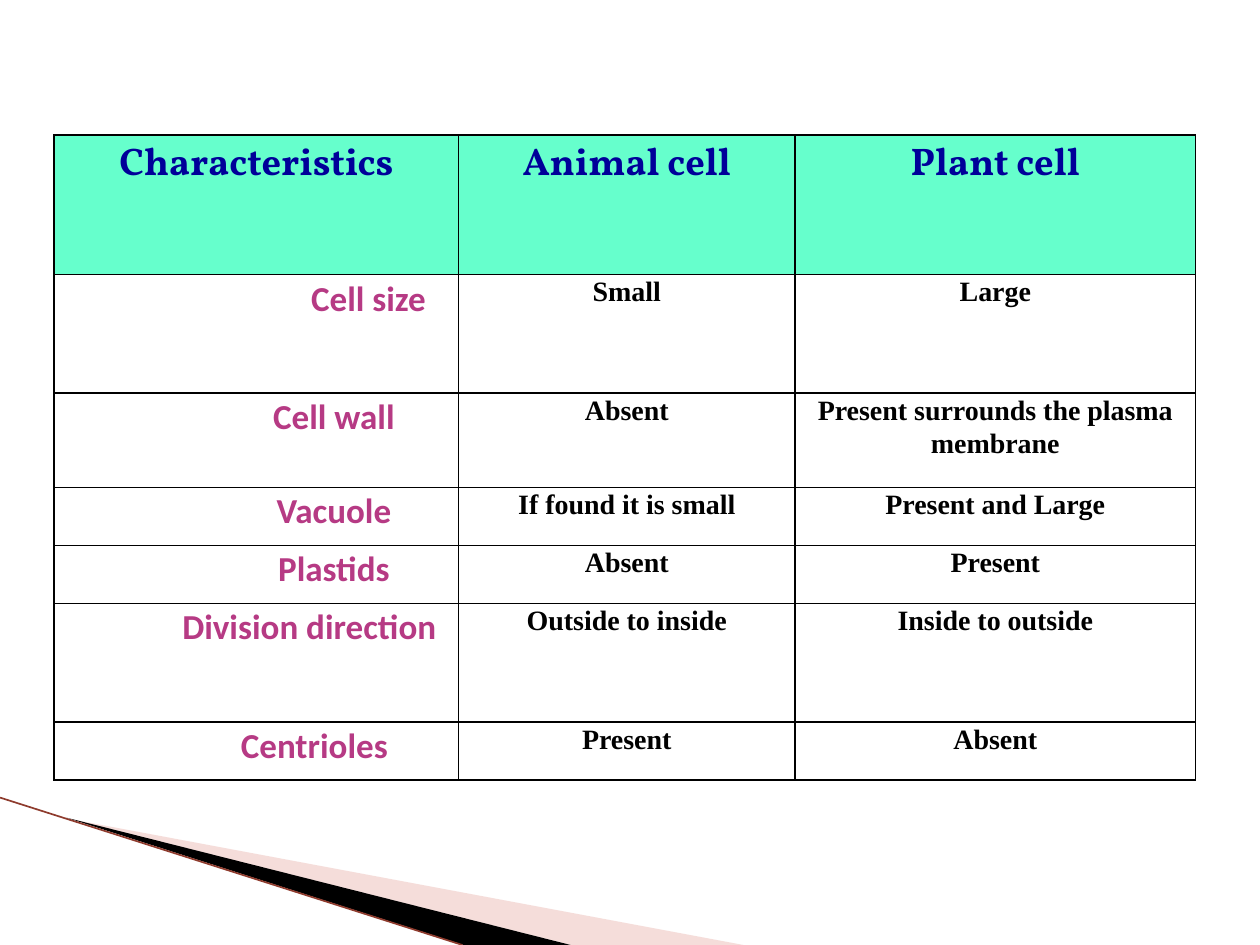
import dataclasses

import lxml.etree
import pptx
import pptx.dml.color
import pptx.enum.shapes
import pptx.enum.text
import pptx.oxml.ns
import pptx.util

Inches = pptx.util.Inches
Pt = pptx.util.Pt
qn = pptx.oxml.ns.qn


def rgb(value):
    return pptx.dml.color.RGBColor.from_string(value)


@dataclasses.dataclass(frozen=True)
class TextStyle:
    font: str
    size: int
    color: str


@dataclasses.dataclass(frozen=True)
class Theme:
    header: TextStyle = TextStyle("Vollkorn", 22, "000099")
    label: TextStyle = TextStyle("Calibri", 20, "B63A84")
    value: TextStyle = TextStyle("Times New Roman", 16, "000000")
    header_fill: str = "66FFCC"
    border: str = "000000"
    border_width: float = 1
    pale_wedge: str = "E7ACA4"
    dark_wedge: str = "000000"
    edge: str = "8E3B2D"
    edge_width: float = 0.95
    line_spacing: float = 1.07
    cell_margin: float = 0.07


class SlideBuilder:
    def __init__(self, slide, theme):
        self.slide = slide
        self.theme = theme

    def wedge(self, points, color, opacity=100):
        corners = [(Inches(x), Inches(y)) for x, y in points]
        builder = self.slide.shapes.build_freeform(*corners[0])
        builder.add_line_segments(corners[1:], close=True)
        shape = builder.convert_to_shape()
        shape.shadow.inherit = False
        shape.fill.solid()
        shape.fill.fore_color.rgb = rgb(color)
        shape.line.fill.background()
        if opacity < 100:
            tint = shape._element.spPr.find(qn("a:solidFill"))[0]
            alpha = lxml.etree.SubElement(tint, qn("a:alpha"))
            alpha.set("val", str(opacity * 1000))

    def line(self, start, end, color, width):
        connector = self.slide.shapes.add_connector(
            pptx.enum.shapes.MSO_CONNECTOR.STRAIGHT,
            *(Inches(length) for length in start + end))
        connector.line.color.rgb = rgb(color)
        connector.line.width = Pt(width)
        lxml.etree.SubElement(connector._element.spPr, qn("a:effectLst"))

    def table(self, left, top, widths, heights, rows, label_indents):
        frame = self.slide.shapes.add_table(
            len(heights), len(widths), Inches(left), Inches(top),
            Inches(sum(widths)), Inches(sum(heights)))
        table = frame.table
        table.first_row = False
        table.horz_banding = False
        for column, width in zip(table.columns, widths):
            column.width = Inches(width)
        for row, height in zip(table.rows, heights):
            row.height = Inches(height)
        for row_index, texts in enumerate(rows):
            for column_index, text in enumerate(texts):
                cell = table.cell(row_index, column_index)
                if row_index == 0:
                    self.cell(cell, text, self.theme.header, fill=self.theme.header_fill)
                elif column_index == 0:
                    self.cell(cell, text, self.theme.label, label_indents[row_index - 1])
                else:
                    self.cell(cell, text, self.theme.value)

    def cell(self, cell, text, style, indent=0, fill=None):
        cell.margin_left = Inches(self.theme.cell_margin + indent)
        cell.margin_right = Inches(self.theme.cell_margin)
        cell.margin_top = cell.margin_bottom = 0
        self.borders(cell)
        if fill:
            cell.fill.solid()
            cell.fill.fore_color.rgb = rgb(fill)
        else:
            cell.fill.background()
        cell.text_frame.text = text
        para = cell.text_frame.paragraphs[0]
        para.alignment = pptx.enum.text.PP_ALIGN.CENTER
        para.line_spacing = self.theme.line_spacing
        span = para.runs[0]
        span.font.name = style.font
        span.font.size = Pt(style.size)
        span.font.bold = True
        span.font.color.rgb = rgb(style.color)

    def borders(self, cell):
        properties = cell._tc.get_or_add_tcPr()
        for side in ("a:lnL", "a:lnR", "a:lnT", "a:lnB"):
            border = lxml.etree.SubElement(properties, qn(side))
            border.set("w", str(Pt(self.theme.border_width)))
            fill = lxml.etree.SubElement(border, qn("a:solidFill"))
            lxml.etree.SubElement(fill, qn("a:srgbClr")).set("val", self.theme.border)


def main():
    deck = pptx.Presentation()
    deck.slide_width = Inches(10)
    deck.slide_height = Inches(7.5)
    theme = Theme()
    page = SlideBuilder(deck.slides.add_slide(deck.slide_layouts[6]), theme)

    page.wedge([(0.55, 6.5), (5.9, 7.5), (4.53, 7.5)], theme.pale_wedge, opacity=40)
    page.wedge([(0.53, 6.49), (4.53, 7.5), (3.68, 7.5)], theme.dark_wedge)
    page.line((0, 6.33), (3.67, 7.5), theme.edge, theme.edge_width)
    page.table(
        0.43, 1.07,
        widths=[3.21, 2.67, 3.18],
        heights=[1.11, 0.94, 0.75, 0.46, 0.46, 0.94, 0.46],
        rows=[
            ("Characteristics", "Animal cell", "Plant cell"),
            ("Cell size", "Small", "Large"),
            ("Cell wall", "Absent", "Present surrounds the plasma membrane"),
            ("Vacuole", "If found it is small", "Present and Large"),
            ("Plastids", "Absent", "Present"),
            ("Division direction", "Outside to inside", "Inside to outside"),
            ("Centrioles", "Present", "Absent"),
        ],
        label_indents=[1.78, 1.23, 1.23, 1.23, 0.84, 0.92])

    deck.save("out.pptx")


if __name__ == "__main__":
    main()
